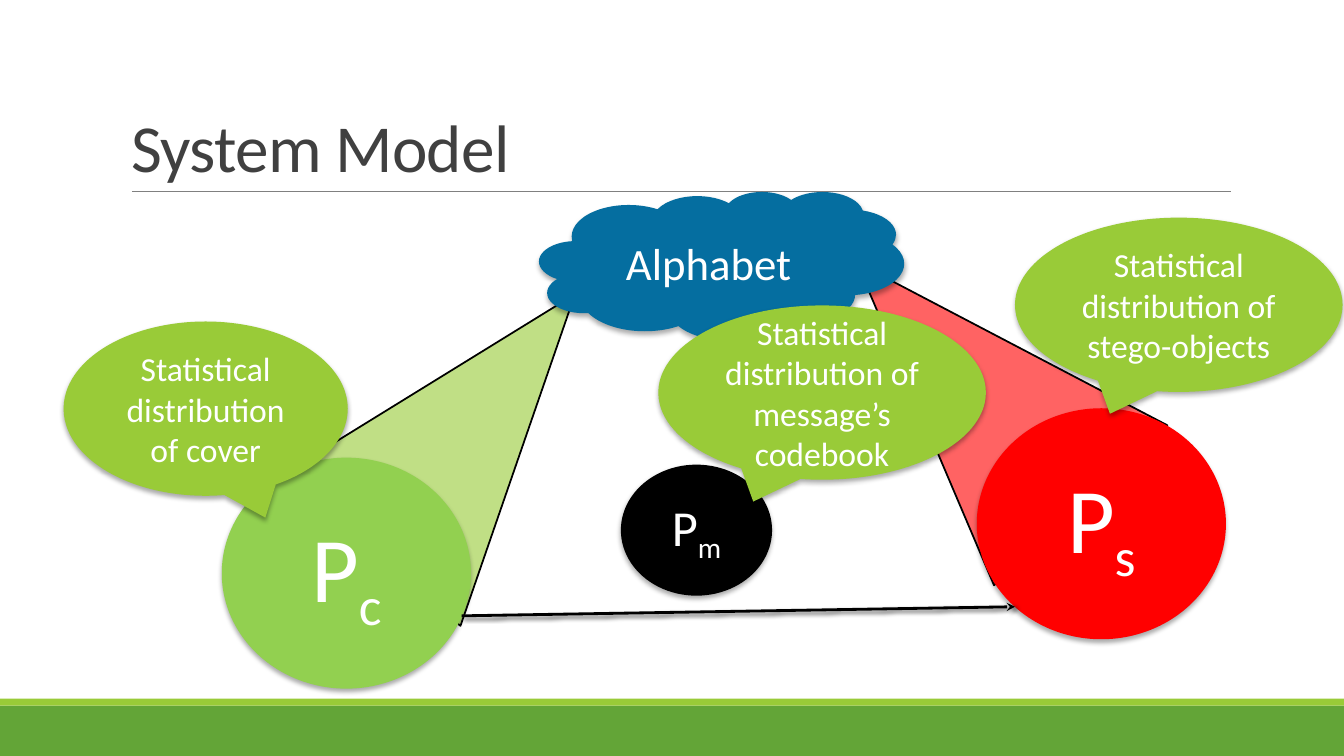
from dataclasses import dataclass

from lxml.etree import SubElement
from pptx import Presentation
from pptx.dml.color import RGBColor
from pptx.enum.shapes import MSO_CONNECTOR as Connector, MSO_SHAPE as Shape
from pptx.enum.text import MSO_ANCHOR as Anchor, PP_ALIGN as Align
from pptx.oxml.ns import qn
from pptx.util import Pt


@dataclass(frozen=True)
class Theme:
    font: str = "Calibri"
    title_size: int = 48
    symbol_size: int = 66
    small_symbol_size: int = 36
    cloud_size: int = 32
    callout_size: int = 24
    title: str = "404040"
    rule: str = "808080"
    footer: str = "63A537"
    accent: str = "99CB38"
    cover: str = "92D050"
    stego: str = "FF0000"
    cloud: str = "056EA0"
    black: str = "000000"
    white: str = "FFFFFF"


class SlideBuilder:
    def __init__(self, slide, theme):
        self.slide = slide
        self.theme = theme

    def set_effect(self, shape, shadow=None):
        effects = SubElement(shape._element.spPr, qn("a:effectLst"))
        if shadow:
            opacity, blur, distance, angle = shadow
            outer = SubElement(effects, qn("a:outerShdw"), blurRad=str(Pt(blur)),
                               dist=str(Pt(distance)), dir=str(angle * 60000),
                               algn="ctr", rotWithShape="0")
            color = SubElement(outer, qn("a:srgbClr"), val=self.theme.black)
            SubElement(color, qn("a:alpha"), val=str(opacity * 1000))

    def add_run(self, paragraph, text, size, color):
        run = paragraph.add_run()
        run.text = text
        run.font.name = self.theme.font
        run.font.size = Pt(size)
        run.font.color.rgb = RGBColor.from_string(color)
        return run

    def title(self, text, left, top, width, height):
        title = self.slide.shapes.title
        title.left, title.top, title.width, title.height = map(Pt, (left, top, width, height))
        title.text_frame.vertical_anchor = Anchor.BOTTOM
        paragraph = title.text_frame.paragraphs[0]
        paragraph.alignment = Align.LEFT
        paragraph.line_spacing = 0.85
        run = self.add_run(paragraph, text, self.theme.title_size, self.theme.title)
        run.font._element.set("spc", "-50")

    def shape(self, kind, box, fill, shadow=None):
        shape = self.slide.shapes.add_shape(kind, *map(Pt, box))
        shape.fill.solid()
        shape.fill.fore_color.rgb = RGBColor.from_string(fill)
        shape.line.fill.background()
        self.set_effect(shape, shadow)
        return shape

    def beam(self, left, top, rotation, fill):
        beam = self.shape(Shape.ISOSCELES_TRIANGLE, (left, top, 168.5, 236), fill)
        beam.rotation = rotation
        beam.line.color.rgb = RGBColor.from_string(self.theme.black)
        beam.line.width = Pt(1.25)
        color = beam._element.spPr.find(qn("a:solidFill"))[0]
        SubElement(color, qn("a:alpha"), val="61000")

    def label(self, kind, box, fill, text, size, subscript=""):
        shape = self.shape(kind, box, fill, (32, 3.5, 2.2, 90))
        frame = shape.text_frame
        frame.word_wrap = True
        frame.vertical_anchor = Anchor.MIDDLE
        paragraph = frame.paragraphs[0]
        paragraph.alignment = Align.CENTER
        self.add_run(paragraph, text, size, self.theme.white)
        if subscript:
            run = self.add_run(paragraph, subscript, size, self.theme.white)
            run.font._element.set("baseline", "-25000")
        return shape

    def callout(self, text, left, top, width, tail=-0.21):
        shape = self.label(Shape.OVAL_CALLOUT, (left, top, width, 124.5),
                           self.theme.accent, text, self.theme.callout_size)
        shape.adjustments[0] = tail

    def line(self, start, end, color, width, arrow=False, shadow=None):
        line = self.slide.shapes.add_connector(Connector.STRAIGHT, *map(Pt, start + end))
        line.line.color.rgb = RGBColor.from_string(color)
        line.line.width = Pt(width)
        if arrow:
            SubElement(line.line._get_or_add_ln(), qn("a:tailEnd"), type="stealth")
        self.set_effect(line, shadow)


def main():
    presentation = Presentation()
    presentation.slide_width = Pt(960)
    presentation.slide_height = Pt(540)
    slide = presentation.slides.add_slide(presentation.slide_layouts[5])
    theme = Theme()
    builder = SlideBuilder(slide, theme)

    builder.shape(Shape.RECTANGLE, (0, 504, 960, 36), theme.footer)
    builder.shape(Shape.RECTANGLE, (0, 499, 960, 5), theme.accent)
    builder.line((94.3, 136.8), (879, 136.8), theme.rule, 0.5)
    builder.title("System Model", 86.4, 22.3, 792, 114.5)

    builder.beam(252.7, 184.3, 38.7, theme.accent)
    builder.beam(607.7, 156.2, 317.3, theme.stego)
    builder.label(Shape.OVAL, (158.4, 326.9, 178, 165), theme.cover,
                  "P", theme.symbol_size, "c")
    builder.label(Shape.CLOUD, (385.2, 136.8, 260.6, 105.8), theme.cloud,
                  "Alphabet", theme.cloud_size)
    builder.label(Shape.OVAL, (697.7, 291.6, 178, 165), theme.stego,
                  "P", theme.symbol_size, "s")
    builder.line((329.8, 439.9), (725, 433.4), theme.black, 2,
                 arrow=True, shadow=(60, 3, 2, 45))
    builder.label(Shape.OVAL, (443.5, 331.9, 108, 93.6), theme.black,
                  "P", theme.small_symbol_size, "m")

    builder.callout("Statistical distribution of stego-objects", 725, 155.5, 234)
    builder.callout("Statistical distribution of cover", 45.4, 229.7, 203, tail=0.21)
    builder.callout("Statistical distribution of message’s codebook", 470.2, 218.2, 234)

    presentation.save("out.pptx")


if __name__ == "__main__":
    main()
